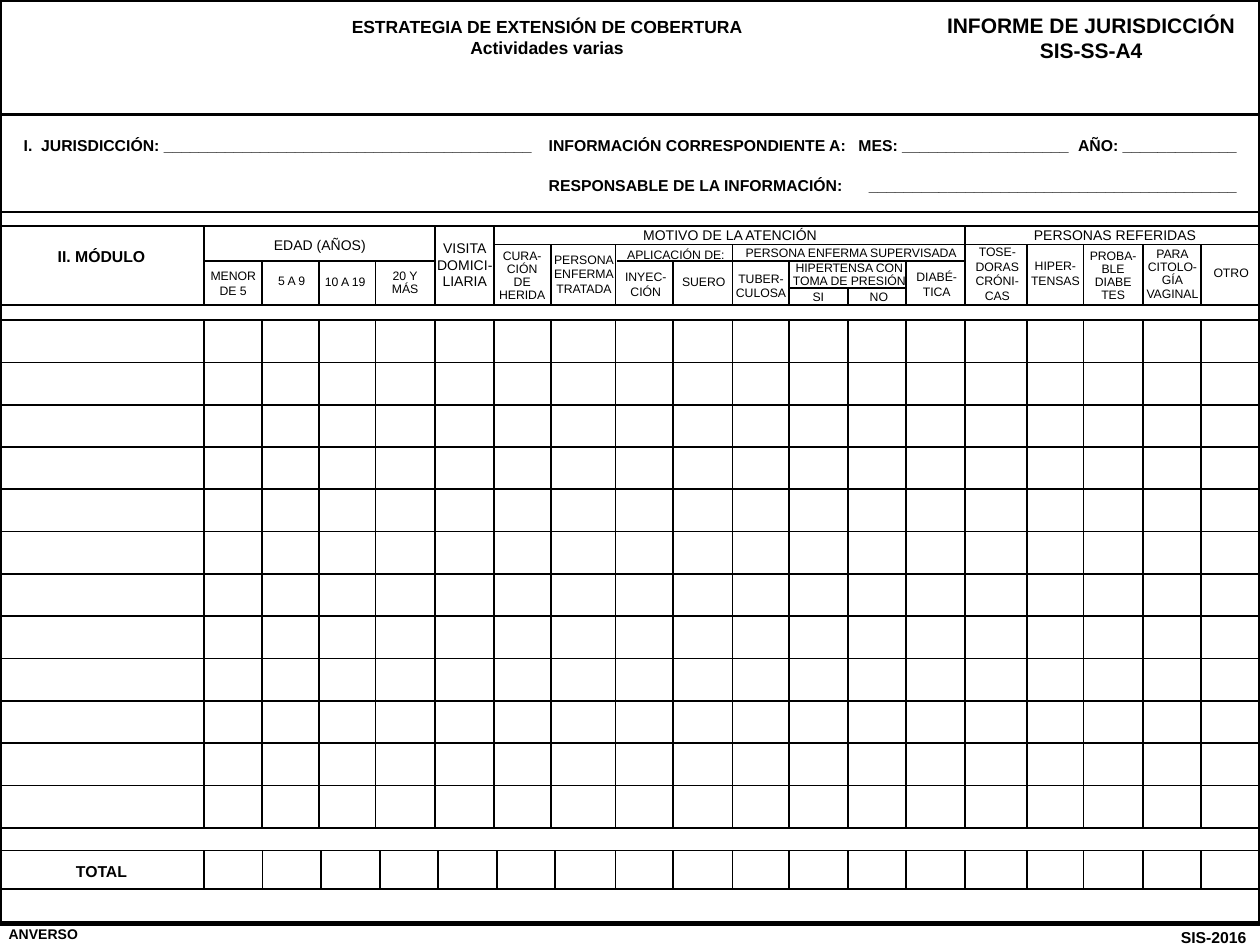
from lxml.etree import SubElement
from pptx import Presentation
from pptx.dml.color import RGBColor
from pptx.enum.shapes import MSO_CONNECTOR, MSO_SHAPE
from pptx.enum.text import MSO_AUTO_SIZE, PP_ALIGN
from pptx.oxml.ns import qn
from pptx.util import Pt

LEFT, CENTER, RIGHT = PP_ALIGN.LEFT, PP_ALIGN.CENTER, PP_ALIGN.RIGHT
STRAIGHT = MSO_CONNECTOR.STRAIGHT
RECTANGLE = MSO_SHAPE.RECTANGLE
GROW = MSO_AUTO_SIZE.SHAPE_TO_FIT_TEXT
WIDTH, HEIGHT = 720, 540
INK = RGBColor.from_string("000000")

deck = Presentation()
deck.slide_width, deck.slide_height = Pt(WIDTH), Pt(HEIGHT)
slide = deck.slides.add_slide(deck.slide_layouts[6])


def write(text, left, top, width, height, size=7, bold=False, align=CENTER,
          wrap=False, leading=None, gap=0, tabs=()):
    """One paragraph per line of text; tabs holds a list of stops per paragraph."""
    box = slide.shapes.add_textbox(Pt(left), Pt(top), Pt(width), Pt(height))
    frame = box.text_frame
    frame.word_wrap = wrap
    frame.auto_size = GROW
    for index, words in enumerate(text.split("\n")):
        paragraph = frame.add_paragraph() if index else frame.paragraphs[0]
        paragraph.alignment = align
        if leading:
            paragraph.line_spacing = leading
        if index and gap:
            paragraph.space_before = Pt(gap)
        if tabs:
            stops = SubElement(paragraph._p.get_or_add_pPr(), qn("a:tabLst"))
            for stop in tabs[index]:
                SubElement(stops, qn("a:tab"), pos=str(Pt(stop)), algn="l")
        run = paragraph.add_run()
        run.text = words
        run.font.name = "Arial"
        run.font.size = Pt(size)
        run.font.bold = bold
        run.font.color.rgb = INK


def rule(x1, y1, x2, y2, weight=1):
    line = slide.shapes.add_connector(STRAIGHT, Pt(x1), Pt(y1), Pt(x2), Pt(y2))
    line.line.color.rgb = INK
    line.line.width = Pt(weight)
    SubElement(line._element.spPr, qn("a:effectLst"))


# Page frame and titles
frame_border = slide.shapes.add_shape(RECTANGLE, 0, 0, Pt(WIDTH), Pt(527.8))
frame_border.shadow.inherit = False
frame_border.fill.background()
frame_border.line.color.rgb = INK
frame_border.line.width = Pt(2.5)
rule(0, 65.5, WIDTH, 65.5, weight=2)

write("ESTRATEGIA DE EXTENSIÓN DE COBERTURA\nActividades varias",
      90, 5.8, 445, 31, size=10, bold=True, wrap=True)
write("INFORME DE JURISDICCIÓN\nSIS-SS-A4",
      532.8, 3.6, 181.4, 36, size=12, bold=True, wrap=True)
write("ANVERSO", -2.2, 525.6, 63.4, 16.6, size=8, bold=True, align=LEFT, wrap=True)
write("SIS-2016", 646.6, 526.3, 72.7, 18, size=9, bold=True, align=RIGHT, wrap=True)

# Identification fields
blank = "_" * 42
write(f"I.\tJURISDICCIÓN: {blank}\tINFORMACIÓN CORRESPONDIENTE A:\t"
      f"MES: {'_' * 19}\tAÑO: {'_' * 13}\n"
      f"\tRESPONSABLE DE LA INFORMACIÓN:\t{blank}",
      6.5, 74.2, 717.8, 40.3, size=9, bold=True, align=LEFT, wrap=True,
      gap=12, tabs=([10, 300, 477, 602.5], [300, 483]))

# Horizontal rules: header, data rows, total row
HEAD_TOP, GROUP_BOTTOM, SUB_BOTTOM, PRESSURE_BOTTOM, HEAD_BOTTOM = 129, 139.8, 149.2, 164.4, 174.4
ROWS, ROW_TOP, ROW_PITCH = 12, 182.9, 24.18
ROW_BOTTOM = ROW_TOP + ROWS * ROW_PITCH
TOTAL_TOP, TOTAL_BOTTOM = 486, 508.2

row_lines = [ROW_TOP + i * ROW_PITCH for i in range(ROWS + 1)]
for y in [121, HEAD_TOP, HEAD_BOTTOM, *row_lines, TOTAL_TOP, TOTAL_BOTTOM]:
    rule(0, y, WIDTH, y)
for start, end, y in [
    (282.5, WIDTH, GROUP_BOTTOM),
    (116.6, 248.4, SUB_BOTTOM),
    (352.5, 551.5, SUB_BOTTOM),
    (451, 517.7, PRESSURE_BOTTOM),
]:
    rule(start, y, end, y)

# Column rules: x in the grid, and where the rule starts in the header
columns = [
    (116.6, HEAD_TOP), (149.8, SUB_BOTTOM), (182.2, SUB_BOTTOM), (214.6, SUB_BOTTOM),
    (248.4, HEAD_TOP), (282.2, HEAD_TOP), (315, GROUP_BOTTOM), (351.7, GROUP_BOTTOM),
    (384.5, SUB_BOTTOM), (418.6, GROUP_BOTTOM), (450.9, SUB_BOTTOM),
    (484.6, PRESSURE_BOTTOM), (517.7, SUB_BOTTOM), (551.5, HEAD_TOP),
    (586.8, GROUP_BOTTOM), (619.2, GROUP_BOTTOM), (653, GROUP_BOTTOM), (686.2, GROUP_BOTTOM),
]
for index, (x, head_start) in enumerate(columns):
    total_x = 116.6 + 33.45 * index if index < 7 else x
    rule(x, head_start, x, HEAD_BOTTOM)
    rule(x, ROW_TOP, x, ROW_BOTTOM)
    rule(total_x, TOTAL_TOP, total_x, TOTAL_BOTTOM)

# Row titles and column groups
write("II. MÓDULO", 0, 137.5, 116, 18.5, size=9, bold=True, wrap=True)
write("TOTAL", 0, 488.9, 116, 18, size=9, bold=True, wrap=True)
for text, left, top, width in [
    ("EDAD (AÑOS)", 116.6, 131.8, 132.5),
    ("MOTIVO DE LA ATENCIÓN", 284.4, 126, 265.7),
    ("PERSONAS REFERIDAS", 553.7, 126, 167),
]:
    write(text, left, top, width, 16.6, size=8, wrap=True)

# Column headings
write("MENOR DE 5", 112.5, 149.8, 41.5, 23.8, wrap=True)
write("VISITA\nDOMICI-\nLIARIA", 242.6, 133.2, 46.1, 36, size=8)
for text, left, top, width, height in [
    ("PERSONA\nENFERMA\nTRATADA", 309.6, 140.4, 48.2, 32.4),
    ("APLICACIÓN DE:", 350.6, 137.5, 71.3, 15.8),
    ("INYEC-\nCIÓN", 349.9, 150.5, 38.2, 23.8),
    ("SUERO", 382.3, 153.4, 39.6, 15.8),
    ("PERSONA ENFERMA SUPERVISADA", 418.3, 136.8, 136.1, 15.8),
    ("TUBER-\nCULOSA", 413.3, 151.2, 43.2, 23.8),
    ("SI", 457.2, 162, 20.9, 15.8),
    ("NO", 489.6, 161.6, 25.2, 15.8),
    ("DIABÉ-\nTICA", 516.2, 150.5, 38.2, 24.5),
    ("TOSE-\nDORAS\nCRÓNI-\nCAS", 550.1, 136.1, 39.6, 41),
    ("HIPER-\nTENSAS", 581.8, 144, 42.5, 23.8),
    ("OTRO", 686.2, 148.3, 34.6, 15.8),
]:
    write(text, left, top, width, height)
for text, left, top, width, height in [
    ("5 A 9", 151.2, 153.4, 31, 14.4),
    ("10 A 19", 177.8, 154.1, 38.9, 14.4),
    ("20 Y\nMÁS", 216.7, 150.5, 29.5, 22.3),
    ("CURA-\nCIÓN\nDE\nHERIDA", 277.9, 139, 41, 37.4),
    ("HIPERTENSA CON\nTOMA DE PRESIÓN", 445, 146.2, 80.6, 22.3),
    ("PROBA-\nBLE\nDIABE\nTES", 615.6, 139, 41, 37.4),
    ("PARA\nCITOLO-\nGÍA\nVAGINAL", 647.3, 138.2, 45.4, 37.4),
]:
    write(text, left, top, width, height, leading=0.9)

deck.save("out.pptx")
